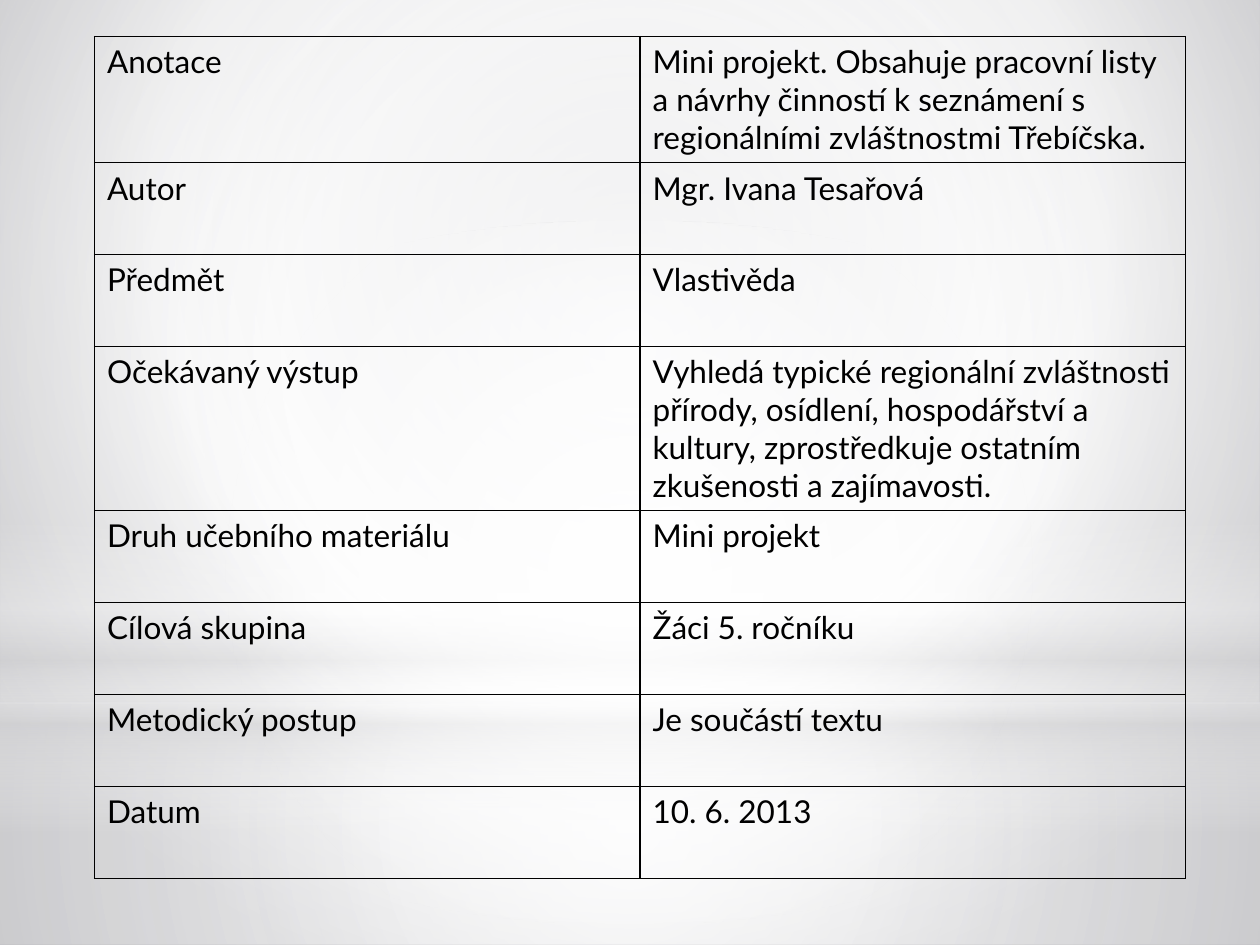
import pptx
import pptx.util
import pptx.dml.color
import pptx.enum.shapes
import pptx.oxml
import pptx.oxml.ns
from pptx.util import Inches

# Content
ROWS = [
    ("Anotace", "Mini projekt. Obsahuje pracovní listy a návrhy činností k seznámení s "
                "regionálními zvláštnostmi Třebíčska."),
    ("Autor", "Mgr. Ivana Tesařová"),
    ("Předmět", "Vlastivěda"),
    ("Očekávaný výstup", "Vyhledá typické regionální zvláštnosti přírody, osídlení, "
                         "hospodářství a kultury, zprostředkuje ostatním zkušenosti "
                         "a zajímavosti."),
    ("Druh učebního materiálu", "Mini projekt"),
    ("Cílová skupina", "Žáci 5. ročníku"),
    ("Metodický postup", "Je součástí textu"),
    ("Datum", "10. 6. 2013"),
]

# Format
BLACK = pptx.dml.color.RGBColor(0x00, 0x00, 0x00)
WHITE = pptx.dml.color.RGBColor(0xFF, 0xFF, 0xFF)
SILVER = pptx.dml.color.RGBColor(0xD4, 0xD4, 0xD6)
PALE_GREY = pptx.dml.color.RGBColor(0xCB, 0xCB, 0xCE)
MID_GREY = pptx.dml.color.RGBColor(0xA9, 0xA9, 0xAE)
TEXT_FORMAT = {"name": "Lato", "size": pptx.util.Pt(18), "bold": False}
BORDER_WIDTH = pptx.util.Pt(1)
TABLE_LEFT, TABLE_TOP, COLUMN_WIDTH, ROW_HEIGHT = 0.75, 0.29, 4.33, 0.73

# Gradient stops: position %, colour, opacity %
CENTRE = (50, 50, 50, 50)
BACKDROP_FOCUS = (20, 10, 20, 60)
BACKDROP = [(0, PALE_GREY, 100), (60, WHITE, 100), (100, MID_GREY, 100)]
RECTANGLE = pptx.enum.shapes.MSO_SHAPE.RECTANGLE
OVAL = pptx.enum.shapes.MSO_SHAPE.OVAL

# Backdrop layers: preset, top, height, stops, focus (None means top to bottom)
LAYERS = [
    (RECTANGLE, 5.58, 1.92, [(0, WHITE, 91), (37, WHITE, 76), (100, SILVER, 79)], CENTRE),
    (RECTANGLE, 0, 5.58, [(0, WHITE, 89), (48, WHITE, 62), (100, SILVER, 79)], CENTRE),
    (RECTANGLE, 4.12, 2.5, [(0, WHITE, 0), (29, WHITE, 30), (45, SILVER, 40),
                            (55, WHITE, 26), (65, SILVER, 60), (100, WHITE, 0)], None),
    (OVAL, 1.75, 5.58, [(0, WHITE, 100), (56, WHITE, 0)], CENTRE),
]


def apply_gradient(fill, element, stops, focus):
    """Fill the element with colour stops, radial around focus or linear."""
    fill.gradient()
    stop_xml = "".join(
        f'<a:gs pos="{position * 1000}"><a:srgbClr val="{colour}">'
        f'<a:alpha val="{opacity * 1000}"/></a:srgbClr></a:gs>'
        for position, colour, opacity in stops)
    if focus:
        sides = " ".join(f'{side}="{value * 1000}"' for side, value in zip("ltrb", focus))
        direction = f'<a:path path="circle"><a:fillToRect {sides}/></a:path>'
    else:
        direction = '<a:lin ang="5400000" scaled="0"/>'
    gradient = element.find(".//" + pptx.oxml.ns.qn("a:gradFill"))
    gradient.getparent().replace(gradient, pptx.oxml.parse_xml(
        f'<a:gradFill {pptx.oxml.ns.nsdecls("a")} rotWithShape="1">'
        f'<a:gsLst>{stop_xml}</a:gsLst>{direction}</a:gradFill>'))


def draw_borders(cell):
    properties = cell._tc.get_or_add_tcPr()
    for index, side in enumerate("LRTB"):
        properties.insert(index, pptx.oxml.parse_xml(
            f'<a:ln{side} {pptx.oxml.ns.nsdecls("a")} w="{BORDER_WIDTH}">'
            f'<a:solidFill><a:srgbClr val="{BLACK}"/></a:solidFill></a:ln{side}>'))


deck = pptx.Presentation()
deck.slide_width, deck.slide_height = Inches(10), Inches(7.5)
page = deck.slides.add_slide(deck.slide_layouts[6])

# Backdrop
apply_gradient(page.background.fill, page._element, BACKDROP, BACKDROP_FOCUS)
for preset, top, height, stops, focus in LAYERS:
    layer = page.shapes.add_shape(preset, 0, Inches(top), deck.slide_width, Inches(height))
    layer.shadow.inherit = False
    layer.line.fill.background()
    apply_gradient(layer.fill, layer._element, stops, focus)

# Table; rows with long text grow to fit
table = page.shapes.add_table(
    len(ROWS), 2, Inches(TABLE_LEFT), Inches(TABLE_TOP),
    Inches(2 * COLUMN_WIDTH), Inches(len(ROWS) * ROW_HEIGHT)).table
table.first_row = table.horz_banding = False
for column in table.columns:
    column.width = Inches(COLUMN_WIDTH)
for row, texts in zip(table.rows, ROWS):
    row.height = Inches(ROW_HEIGHT)
    for cell, text in zip(row.cells, texts):
        cell.fill.background()
        draw_borders(cell)
        span = cell.text_frame.paragraphs[0].add_run()
        span.text = text
        span.font.color.rgb = BLACK
        for attribute, value in TEXT_FORMAT.items():
            setattr(span.font, attribute, value)

deck.save("out.pptx")
